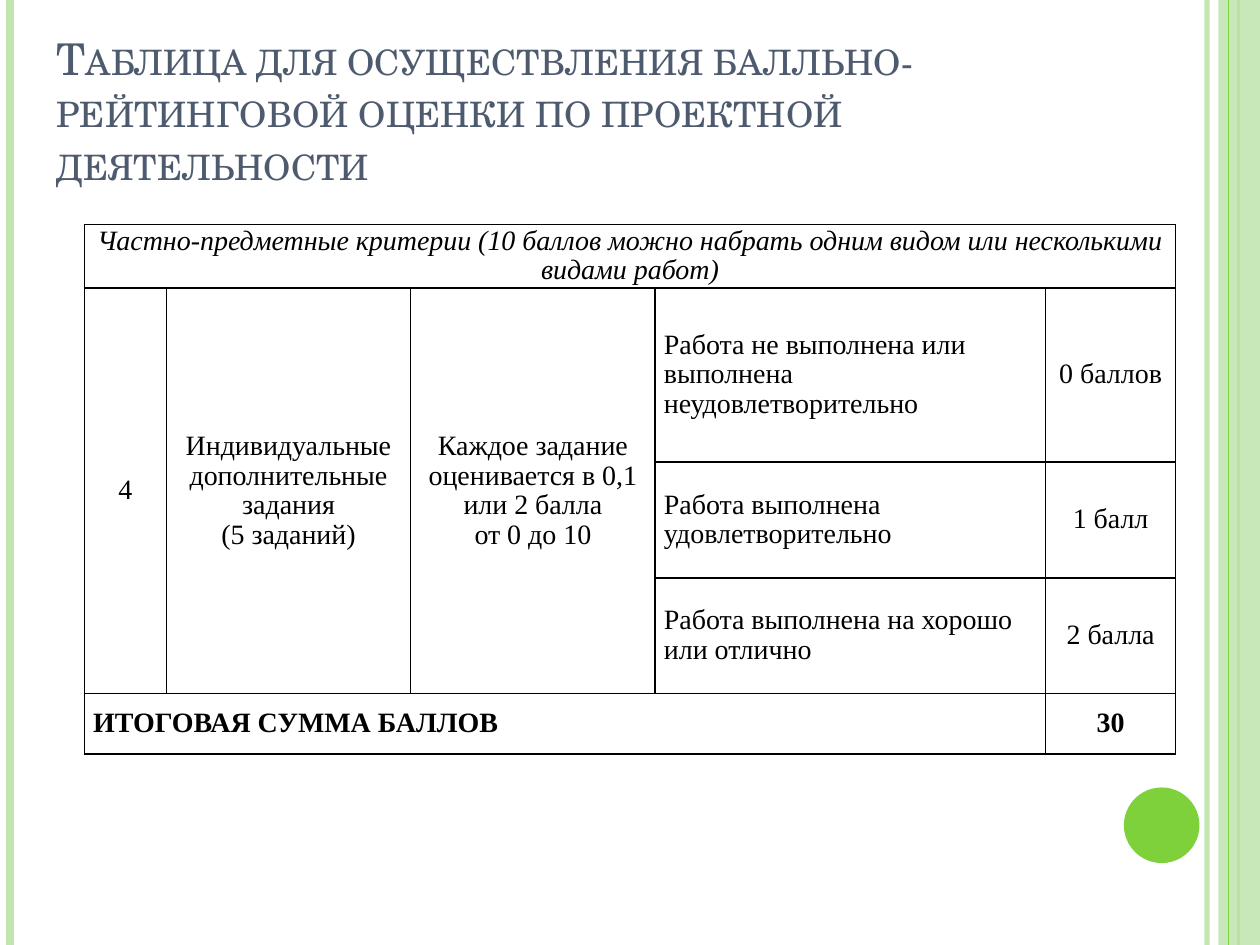
from dataclasses import dataclass
from typing import Optional

from lxml.etree import SubElement
from pptx import Presentation
from pptx.dml.color import RGBColor
from pptx.enum.shapes import MSO_CONNECTOR, MSO_SHAPE
from pptx.enum.text import MSO_ANCHOR, PP_ALIGN
from pptx.oxml import parse_xml
from pptx.oxml.ns import nsdecls, qn
from pptx.util import Inches, Pt


@dataclass(frozen=True)
class Theme:
    pale: str = "C0E5AF"
    green: str = "7FD13B"
    slate: str = "4E5B6F"
    black: str = "000000"
    title_font: str = "TeX Gyre Schola"
    table_font: str = "Times New Roman"
    title_size: float = 25
    table_size: float = 16
    border: float = 1


@dataclass(frozen=True)
class Stripe:
    left: float
    width: float
    color: str
    opacity: Optional[int] = None


@dataclass(frozen=True)
class Entry:
    row: int
    column: int
    text: str
    rows: int = 1
    columns: int = 1
    align: PP_ALIGN = PP_ALIGN.CENTER
    bold: bool = False
    italic: bool = False


THEME = Theme()
LEFT = PP_ALIGN.LEFT
COLUMNS = (0.65, 1.94, 1.94, 3.1, 1.03)
ROWS = (0.48, 1.38, 0.92, 0.92, 0.48)
BACK_STRIPES = (
    Stripe(9.58, 3, THEME.pale, 93),
    Stripe(0.08, 4.5, THEME.pale),
    Stripe(9.83, 1.5, THEME.green),
)
FRONT_STRIPE = Stripe(9.75, 0.75, THEME.green)
TITLE = "Таблица для осуществления балльно-рейтинговой оценки по проектной деятельности"
ENTRIES = (
    Entry(0, 0, "Частно-предметные критерии (10 баллов можно набрать одним видом "
                "или несколькими видами работ)", columns=5, italic=True),
    Entry(1, 0, "4", rows=3),
    Entry(1, 1, "Индивидуальные дополнительные задания\n(5 заданий)", rows=3),
    Entry(1, 2, "Каждое задание оценивается в 0,1 или 2 балла\nот 0 до 10", rows=3),
    Entry(1, 3, "Работа не выполнена или выполнена неудовлетворительно", align=LEFT),
    Entry(1, 4, "0 баллов"),
    Entry(2, 3, "Работа выполнена удовлетворительно", align=LEFT),
    Entry(2, 4, "1 балл"),
    Entry(3, 3, "Работа выполнена на хорошо или отлично", align=LEFT),
    Entry(3, 4, "2 балла"),
    Entry(4, 0, "ИТОГОВАЯ СУММА БАЛЛОВ", columns=4, align=LEFT, bold=True),
    Entry(4, 4, "30", bold=True),
)


def set_opacity(element, percent: int) -> None:
    """Make the solid colour inside an element partly transparent."""
    color = next(element.iter(qn("a:srgbClr")))
    SubElement(color, qn("a:alpha")).set("val", str(percent * 1000))


def write(frame, text: str, *, font: str, size: float, color: str,
          align: PP_ALIGN = LEFT, spacing: Optional[float] = None, bold: bool = False,
          italic: bool = False, small_caps: bool = False) -> None:
    """Fill a text frame, one paragraph for each line of text."""
    frame.word_wrap = True
    for index, line in enumerate(text.split("\n")):
        para = frame.add_paragraph() if index else frame.paragraphs[0]
        para.alignment = align
        if spacing:
            para.line_spacing = spacing
        span = para.add_run()
        span.text = line
        span.font.name, span.font.size = font, Pt(size)
        span.font.bold, span.font.italic = bold, italic
        span.font.color.rgb = RGBColor.from_string(color)
        if small_caps:
            span._r.get_or_add_rPr().set("cap", "small")


def draw_stripe(page, stripe: Stripe) -> None:
    """Draw a vertical line over the full height of the slide."""
    left = Inches(stripe.left)
    line = page.shapes.add_connector(MSO_CONNECTOR.STRAIGHT, left, 0, left, Inches(7.5))
    line.line.width = Pt(stripe.width)
    line.line.color.rgb = RGBColor.from_string(stripe.color)
    properties = line._element.spPr
    if stripe.opacity:
        set_opacity(properties, stripe.opacity)
    SubElement(properties, qn("a:effectLst"))


def draw_shape(page, kind: MSO_SHAPE, left: float, top: float, width: float,
               height: float, color: str, opacity: Optional[int] = None) -> None:
    """Draw a filled shape without an outline."""
    shape = page.shapes.add_shape(kind, Inches(left), Inches(top), Inches(width), Inches(height))
    shape.shadow.inherit = False
    shape.fill.solid()
    shape.fill.fore_color.rgb = RGBColor.from_string(color)
    shape.line.fill.background()
    if opacity:
        set_opacity(shape._element.spPr, opacity)


def add_borders(cell) -> None:
    """Put a thin solid line on all four sides of a cell."""
    for index, side in enumerate(("lnL", "lnR", "lnT", "lnB")):
        cell._tc.get_or_add_tcPr().insert(index, parse_xml(
            f'<a:{side} {nsdecls("a")} w="{Pt(THEME.border)}"><a:solidFill>'
            f'<a:srgbClr val="{THEME.black}"/></a:solidFill></a:{side}>'))


def draw_table(page) -> None:
    """Draw the table of criteria and points."""
    table = page.shapes.add_table(len(ROWS), len(COLUMNS), Inches(0.67), Inches(1.78),
                                  Inches(sum(COLUMNS)), Inches(sum(ROWS))).table
    table.first_row = table.horz_banding = False
    for column, width in zip(table.columns, COLUMNS):
        column.width = Inches(width)
    for row, height in zip(table.rows, ROWS):
        row.height = Inches(height)
    for cell in table.iter_cells():
        cell.fill.background()
        cell.margin_left = cell.margin_right = Inches(0.07)
        cell.margin_top = cell.margin_bottom = 0
        cell.vertical_anchor = MSO_ANCHOR.MIDDLE
        add_borders(cell)
    for entry in ENTRIES:
        cell = table.cell(entry.row, entry.column)
        if entry.rows * entry.columns > 1:
            cell.merge(table.cell(entry.row + entry.rows - 1, entry.column + entry.columns - 1))
        write(cell.text_frame, entry.text, font=THEME.table_font, size=THEME.table_size,
              color=THEME.black, align=entry.align, spacing=0.95, bold=entry.bold,
              italic=entry.italic)


def main() -> None:
    """Build the slide and save it."""
    deck = Presentation()
    deck.slide_width, deck.slide_height = Inches(10), Inches(7.5)
    page = deck.slides.add_slide(deck.slide_layouts[6])
    for stripe in BACK_STRIPES:
        draw_stripe(page, stripe)
    draw_shape(page, MSO_SHAPE.RECTANGLE, 9.67, 0, 0.33, 7.5, THEME.pale, 87)
    draw_stripe(page, FRONT_STRIPE)
    draw_shape(page, MSO_SHAPE.OVAL, 8.92, 6.25, 0.6, 0.6, THEME.green)
    box = page.shapes.add_textbox(Inches(0.35), Inches(0.3), Inches(8.98), Inches(1.25))
    box.text_frame.vertical_anchor = MSO_ANCHOR.BOTTOM
    write(box.text_frame, TITLE, font=THEME.title_font, size=THEME.title_size,
          color=THEME.slate, small_caps=True)
    draw_table(page)
    deck.save("out.pptx")


if __name__ == "__main__":
    main()
